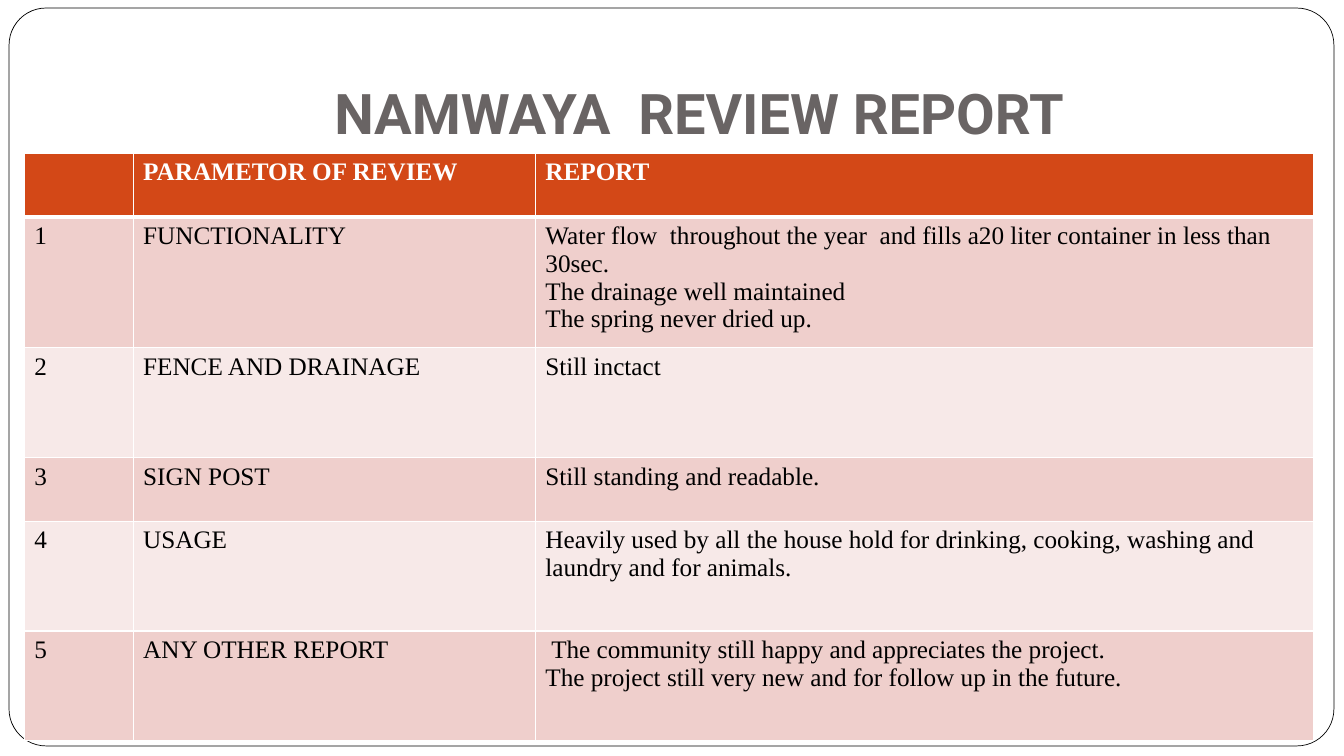
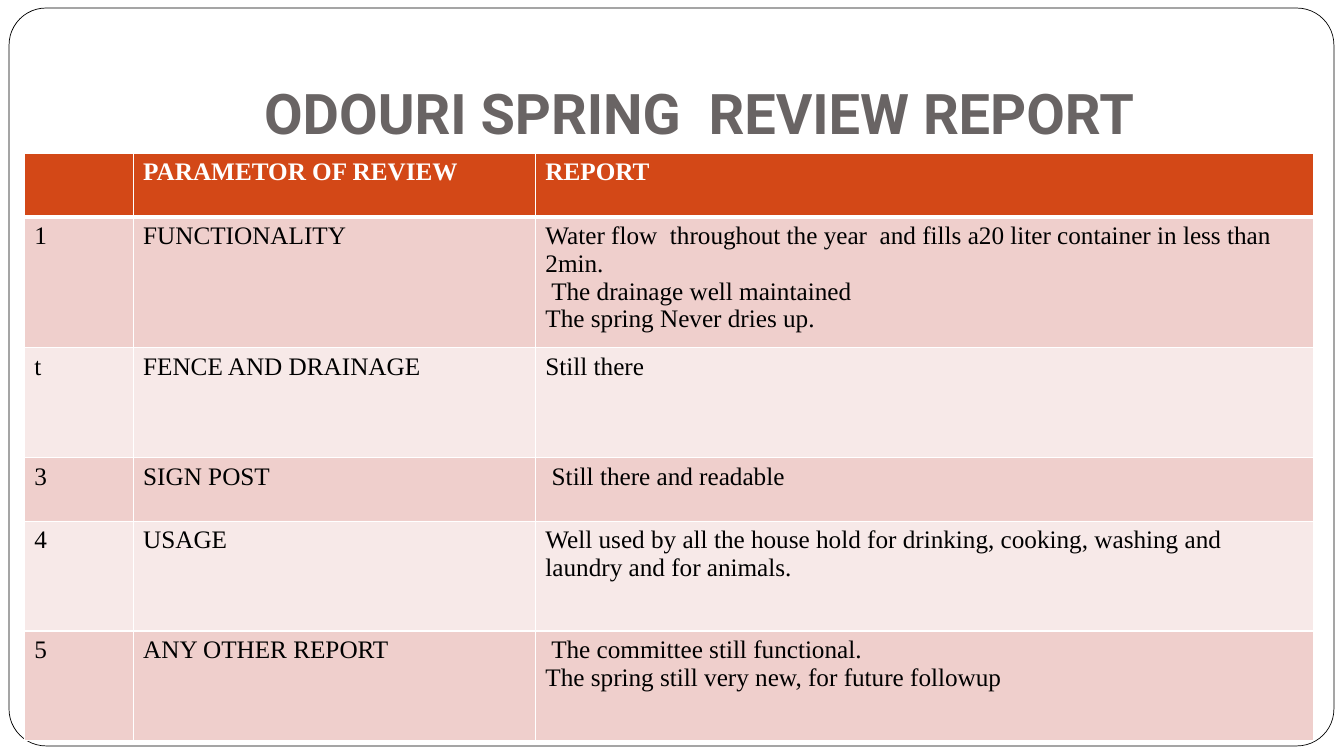
from lxml.etree import SubElement
from pptx import Presentation
from pptx.dml.color import RGBColor
from pptx.enum.shapes import MSO_SHAPE as SHAPE
from pptx.enum.text import MSO_ANCHOR as ANCHOR, PP_ALIGN as ALIGN
from pptx.oxml.ns import qn
from pptx.util import Inches, Pt

COLORS = {
    "paper": "FFFFFF",
    "frame": "000000",
    "title": "696464",
    "header": "D34817",
    "odd": "EFCFCC",
    "even": "F7E9E8",
    "body": "000000",
}
TITLE_FONT, TABLE_FONT = "Roboto", "Times New Roman"
COL_WIDTHS = [1.08, 3.99, 7.72]
SHORT, TALL = 0.63, 1.09
ROW_HEIGHTS = [SHORT, TALL, TALL, SHORT, TALL, TALL]
HEADINGS = ["", "PARAMETOR OF REVIEW", "REPORT"]
PARAMETERS = ["FUNCTIONALITY", "FENCE AND DRAINAGE", "SIGN POST", "USAGE", "ANY OTHER REPORT"]

REVIEWS = [
    ("NAMWAYA  REVIEW REPORT ", "12345", [
        "Water flow  throughout the year  and fills a20 liter container in less than 30sec.\n"
        "The drainage well maintained\n"
        "The spring never dried up.",
        "Still inctact",
        "Still standing and readable.",
        "Heavily used by all the house hold for drinking, cooking, washing and laundry "
        "and for animals.",
        " The community still happy and appreciates the project.\n"
        "The project still very new and for follow up in the future.",
    ]),
    ("ODOURI SPRING  REVIEW REPORT ", "1t345", [
        "Water flow  throughout the year  and fills a20 liter container in less than 2min.\n"
        " The drainage well maintained\n"
        "The spring Never dries up.",
        "Still there",
        " Still there and readable",
        "Well used by all the house hold for drinking, cooking, washing and laundry "
        "and for animals.",
        " The committee still functional.\n"
        "The spring still very new, for future followup",
    ]),
]


def color(name):
    return RGBColor.from_string(COLORS[name])


class Deck:
    def __init__(self):
        self.prs = Presentation()
        self.prs.slide_width, self.prs.slide_height = Inches(13.33), Inches(7.5)
        self.s = None

    def new_slide(self):
        self.s = self.prs.slides.add_slide(self.prs.slide_layouts[6])
        self.frame()

    def frame(self):
        """Rounded outline around the whole slide."""
        sp = self.s.shapes.add_shape(
            SHAPE.ROUNDED_RECTANGLE, Inches(0.09), Inches(0.08), Inches(13.14), Inches(7.32))
        sp.adjustments[0] = 0.05
        sp.shadow.inherit = False
        sp.fill.solid()
        sp.fill.fore_color.rgb = color("paper")
        sp.line.color.rgb = color("frame")
        sp.line.width = Pt(0.5)

    def style(self, tf, font, size, name, bold):
        for p in tf.paragraphs:
            for r in p.runs:
                r.font.name, r.font.size, r.font.bold = font, Pt(size), bold
                r.font.color.rgb = color(name)

    def title(self, text):
        sp = self.s.shapes.add_textbox(Inches(1.33), Inches(0.3), Inches(11.33), Inches(1.25))
        tf = sp.text_frame
        tf.word_wrap = True
        tf.vertical_anchor = ANCHOR.BOTTOM
        tf.margin_bottom = Inches(0.1)
        tf.text = text
        tf.paragraphs[0].alignment = ALIGN.CENTER
        self.style(tf, TITLE_FONT, 40, "title", True)

    def borders(self, cell, top, bottom):
        """White cell edges; top and bottom are widths in points."""
        tc_pr = cell._tc.get_or_add_tcPr()
        for side, width in (("L", 1), ("R", 1), ("T", top), ("B", bottom)):
            ln = SubElement(tc_pr, qn(f"a:ln{side}"), w=str(Pt(width)))
            fill = SubElement(ln, qn("a:solidFill"))
            SubElement(fill, qn("a:srgbClr"), val=COLORS["paper"])

    def table(self, rows):
        table = self.s.shapes.add_table(
            len(rows), len(COL_WIDTHS), Inches(0.24), Inches(1.52),
            Inches(sum(COL_WIDTHS)), Inches(sum(ROW_HEIGHTS))).table
        for col, width in zip(table.columns, COL_WIDTHS):
            col.width = Inches(width)
        for i, (row, height, texts) in enumerate(zip(table.rows, ROW_HEIGHTS, rows)):
            row.height = Inches(height)
            header = i == 0
            band = "header" if header else "odd" if i % 2 else "even"
            for cell, text in zip(row.cells, texts):
                self.borders(cell, top=3 if i == 1 else 1, bottom=3 if header else 1)
                cell.fill.solid()
                cell.fill.fore_color.rgb = color(band)
                cell.text_frame.text = text
                self.style(cell.text_frame, TABLE_FONT, 18, "paper" if header else "body", header)


def main():
    deck = Deck()
    for title, numbers, reports in REVIEWS:
        deck.new_slide()
        deck.title(title)
        deck.table([HEADINGS, *zip(numbers, PARAMETERS, reports)])
    deck.prs.save("out.pptx")


if __name__ == "__main__":
    main()
